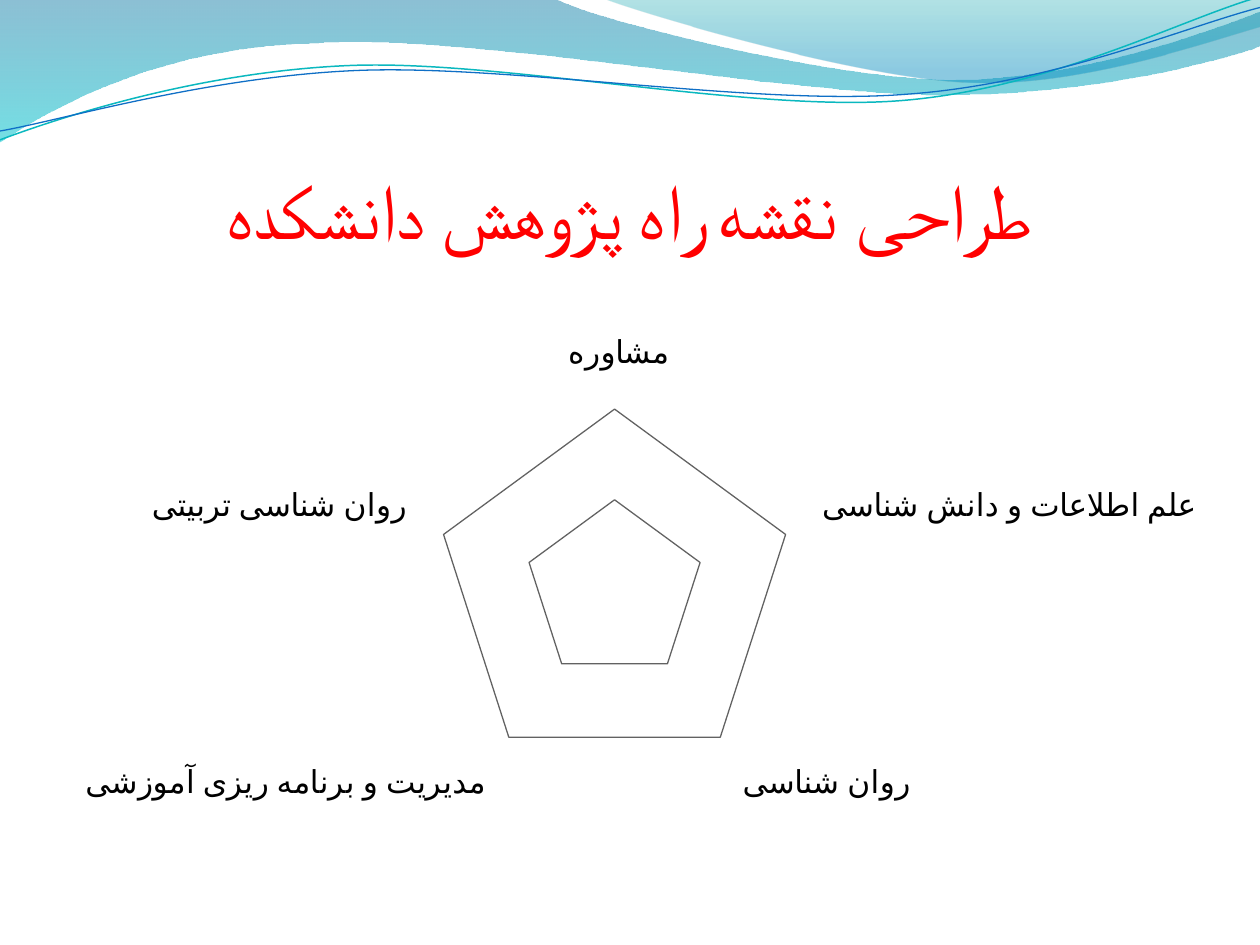
import math

from lxml import etree
from pptx import Presentation
from pptx.chart.data import CategoryChartData
from pptx.dml.color import RGBColor
from pptx.enum.chart import XL_CHART_TYPE, XL_TICK_LABEL_POSITION
from pptx.enum.text import MSO_ANCHOR, PP_ALIGN
from pptx.oxml.ns import qn
from pptx.util import Inches, Pt

RADAR = XL_CHART_TYPE.RADAR
NEXT_TO_AXIS = XL_TICK_LABEL_POSITION.NEXT_TO_AXIS
BOTTOM = MSO_ANCHOR.BOTTOM
CENTER = PP_ALIGN.CENTER

COLORS = {
    "title": "FF0000", "text": "000000", "grid": "626262",
    "deep": "0074A1", "aqua": "00C6CF", "teal": "00A1A9", "sky": "008BBF",
    "teal_line": "0AB8BF", "blue_line": "0F6FC6",
}
TILT = 357.3

# Waves: a point is a straight step, a triple of points is a Bezier curve
BAND = [(0, 0), (4.4, -0.01),
        ((4.76, 0.17), (6.64, 0.63), (7.58, 0.63)),
        ((8.53, 0.63), (9.58, 0.26), (10, 0.09)), (10.01, 0.36),
        ((9.83, 0.44), (8.7, 0.76), (7.46, 0.75)),
        ((6.22, 0.75), (3.82, 0.28), (2.57, 0.34)),
        ((1.29, 0.36), (0.46, 0.83), (-0.01, 1.13)), (0, 0)]
CORNER = [(4.79, -0.01),
          ((5.09, 0.11), (6.82, 0.62), (7.69, 0.65)),
          ((8.56, 0.69), (9.61, 0.32), (10, 0.21)), (10, 0), (4.79, -0.01)]
TEAL_WAVE = [(0, 1.11),
             ((0.48, 0.93), (1.58, 0.57), (2.77, 0.52)),
             ((3.95, 0.47), (5.93, 0.89), (7.13, 0.8)),
             ((8.33, 0.71), (9.38, 0.15), (9.98, -0.02))]
BLUE_WAVE = [(0, 1.04),
             ((0.47, 0.96), (1.64, 0.61), (2.83, 0.56)),
             ((4.03, 0.51), (5.97, 0.84), (7.17, 0.75)),
             ((8.36, 0.67), (9.41, 0.21), (10, 0.06))]

CATEGORIES = [" مشاوره", "علم اطلاعات و دانش شناسی", "روان شناسی ",
              "مدیریت و برنامه ریزی آموزشی", "روان شناسی تربیتی"]
SERIES = {"Series 1": (100, 100, 88, 38, 47),
          "Series 2": (38, 38, 38, 66, 88)}


def rgb(name):
    return RGBColor.from_string(COLORS[name])


def is_curve(step):
    return len(step) == 3


def turn(point, center, degrees):
    """Rotate a point about a center, clockwise on the slide."""
    angle = math.radians(degrees)
    dx, dy = point[0] - center[0], point[1] - center[1]
    return (center[0] + dx * math.cos(angle) - dy * math.sin(angle),
            center[1] + dx * math.sin(angle) + dy * math.cos(angle))


def add_path(s, path, close, center=(0, 0), rotation=0):
    points = [p for step in path for p in (step if is_curve(step) else (step,))]
    points = [turn(p, center, -rotation) for p in points]
    points = [(Inches(x), Inches(y)) for x, y in points]
    builder = s.shapes.build_freeform(*points[0])
    builder.add_line_segments(points[1:], close=close)
    sp = builder.convert_to_shape()
    sp.rotation = rotation
    sp.shadow.inherit = False
    # Join the three line steps of each curve into one Bezier step
    lines = iter(list(sp.element.iter(qn("a:lnTo"))))
    for step in path[1:]:
        first = next(lines)
        if is_curve(step):
            first.tag = qn("a:cubicBezTo")
            for _ in range(2):
                line = next(lines)
                first.append(line[0])
                line.getparent().remove(line)
    return sp


def add_gradient_wave(s, path, stops):
    sp = add_path(s, path, True)
    sp.line.fill.background()
    sp.fill.gradient()
    sp.fill.gradient_angle = 270
    for stop, (position, color, _) in zip(sp.fill.gradient_stops, stops):
        stop.position = position
        stop.color.rgb = rgb(color)
    # Opacity of each stop
    for clr, (_, _, opacity) in zip(sp.element.spPr.iter(qn("a:srgbClr")), stops):
        etree.SubElement(clr, qn("a:alpha")).set("val", str(opacity * 1000))


def add_line_wave(s, path, center, color, width):
    sp = add_path(s, path, False, center, TILT)
    sp.fill.background()
    sp.line.color.rgb = rgb(color)
    sp.line.width = Pt(width)


def set_title(s, text):
    sp = s.shapes.title
    sp.left, sp.top, sp.width, sp.height = map(Inches, (0.5, 0.77, 9, 1.25))
    tf = sp.text_frame
    tf.word_wrap = True
    tf.vertical_anchor = BOTTOM
    tf.margin_left = tf.margin_right = tf.margin_bottom = 0
    tf.margin_top = Inches(0.05)
    p = tf.paragraphs[0]
    p.alignment = CENTER
    p._p.get_or_add_pPr().set("rtl", "1")
    r = p.add_run()
    r.text = text
    r.font.size = Pt(44)
    r.font.name = "Calibri"
    r.font.color.rgb = rgb("title")
    # Arabic script takes the complex-script font
    etree.SubElement(r._r.get_or_add_rPr(), qn("a:cs")).set("typeface", "Calibri")


def add_radar(s):
    data = CategoryChartData()
    data.categories = CATEGORIES
    for name, values in SERIES.items():
        data.add_series(name, values)
    chart = s.shapes.add_chart(RADAR, Inches(0.5), Inches(2.12),
                               Inches(9), Inches(4.8), data).chart
    chart.has_legend = False
    chart.has_title = False
    chart.font.size = Pt(18)
    chart.font.name = "TeX Gyre Pagella"
    chart.font.color.rgb = rgb("text")

    # Two pentagon rings, no value labels
    axis = chart.value_axis
    axis.minimum_scale, axis.maximum_scale, axis.major_unit = 0, 100, 50
    axis.has_major_gridlines = True
    axis.major_gridlines.format.line.color.rgb = rgb("grid")
    axis.major_gridlines.format.line.width = Pt(0.75)
    axis.visible = False
    chart.category_axis.tick_label_position = NEXT_TO_AXIS

    # Only the rings show, the series have no line
    for series in chart.plots[0].series:
        series.smooth = False
        series.format.line.fill.background()


def main():
    prs = Presentation()
    prs.slide_width, prs.slide_height = Inches(10), Inches(7.5)
    s = prs.slides.add_slide(prs.slide_layouts[5])

    # Header waves
    add_gradient_wave(s, BAND, [(0, "deep", 45), (1, "aqua", 55)])
    add_gradient_wave(s, CORNER, [(0, "teal", 30), (0.8, "sky", 45)])
    add_line_wave(s, TEAL_WAVE, (4.99, 0.58), "teal_line", 0.85)
    add_line_wave(s, BLUE_WAVE, (5, 0.59), "blue_line", 0.75)

    # Content
    set_title(s, "طراحی نقشه راه پژوهش دانشکده")
    add_radar(s)
    prs.save("out.pptx")


if __name__ == "__main__":
    main()
